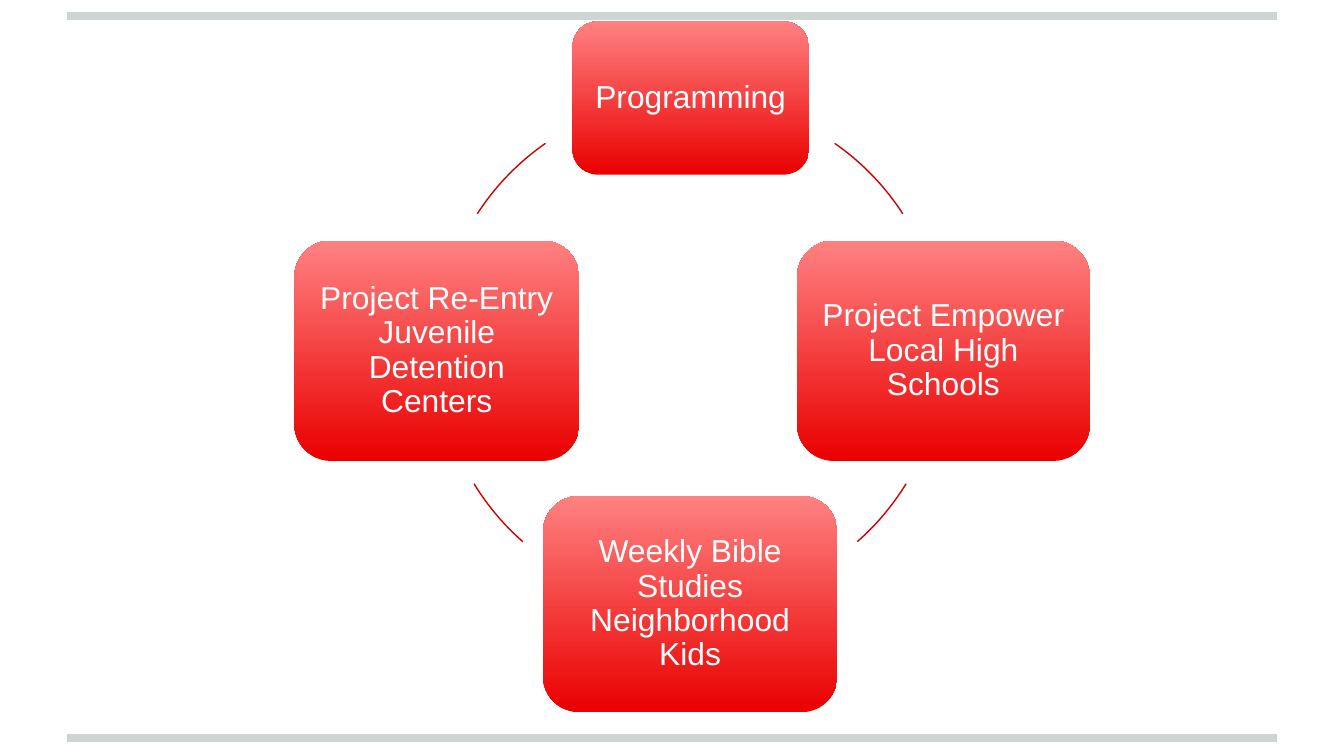
from lxml.etree import SubElement
from pptx import Presentation
from pptx.dml.color import RGBColor
from pptx.enum.shapes import MSO_CONNECTOR, MSO_SHAPE
from pptx.enum.text import MSO_ANCHOR, PP_ALIGN
from pptx.oxml.ns import qn
from pptx.util import Inches, Pt


def color(hex_string):
    return RGBColor.from_string(hex_string)


# Widescreen, 16:9
presentation = Presentation()
presentation.slide_width = Inches(10)
presentation.slide_height = Inches(10 * 9 / 16)
slide = presentation.slides.add_slide(presentation.slide_layouts[6])

# Rules along the top and bottom edges
for y in (0.12, 5.49):
    rule = slide.shapes.add_connector(
        MSO_CONNECTOR.STRAIGHT, Inches(0.5), Inches(y), Inches(9.5), Inches(y))
    rule.line.color.rgb = color("CFD4D4")
    rule.line.width = Pt(4)
    SubElement(rule._element.spPr, qn("a:effectLst"))

# Arcs of one circle, as clockwise degrees from three o'clock;
# the left pair mirrors the right pair
right_arcs = [(304.8, 327.1), (31.5, 48.7)]
left_arcs = [((540 - end) % 360, (540 - start) % 360) for start, end in right_arcs]
for start, end in right_arcs + left_arcs:
    arc = slide.shapes.add_shape(
        MSO_SHAPE.ARC, Inches(3.25), Inches(0.73), Inches(3.77), Inches(3.77))
    # Angles are stored in 60000ths of a degree, adjustments in 100000ths
    arc.adjustments[0] = start * 0.6
    arc.adjustments[1] = end * 0.6
    arc.fill.background()
    arc.line.color.rgb = color("CC0001")
    arc.line.width = Pt(0.75)
    arc.shadow.inherit = False

# Program boxes, clockwise from the top: left, top, width, height, text
boxes = [
    (4.26, 0.16, 1.76, 1.14, "Programming"),
    (5.93, 1.79, 2.18, 1.64, "Project Empower Local High Schools"),
    (4.04, 3.69, 2.19, 1.61, "Weekly Bible Studies Neighborhood Kids"),
    (2.19, 1.79, 2.12, 1.64, "Project Re-Entry Juvenile Detention Centers"),
]
for left, top, width, height, text in boxes:
    box = slide.shapes.add_shape(
        MSO_SHAPE.ROUNDED_RECTANGLE,
        Inches(left), Inches(top), Inches(width), Inches(height))
    box.shadow.inherit = False
    box.line.fill.background()
    box.fill.gradient()
    box.fill.gradient_angle = 90
    for stop, shade in zip(box.fill.gradient_stops, ("EA0000", "FF8181")):
        stop.color.rgb = color(shade)

    frame = box.text_frame
    frame.word_wrap = True
    frame.vertical_anchor = MSO_ANCHOR.MIDDLE
    frame.margin_left = frame.margin_right = Inches(0.07)
    frame.margin_top = frame.margin_bottom = Inches(0.07)
    paragraph = frame.paragraphs[0]
    paragraph.text = text
    paragraph.alignment = PP_ALIGN.CENTER
    paragraph.line_spacing = 0.9
    paragraph.font.name = "Arial"
    paragraph.font.size = Pt(17)
    paragraph.font.color.rgb = color("FFFFFF")

presentation.save("out.pptx")
